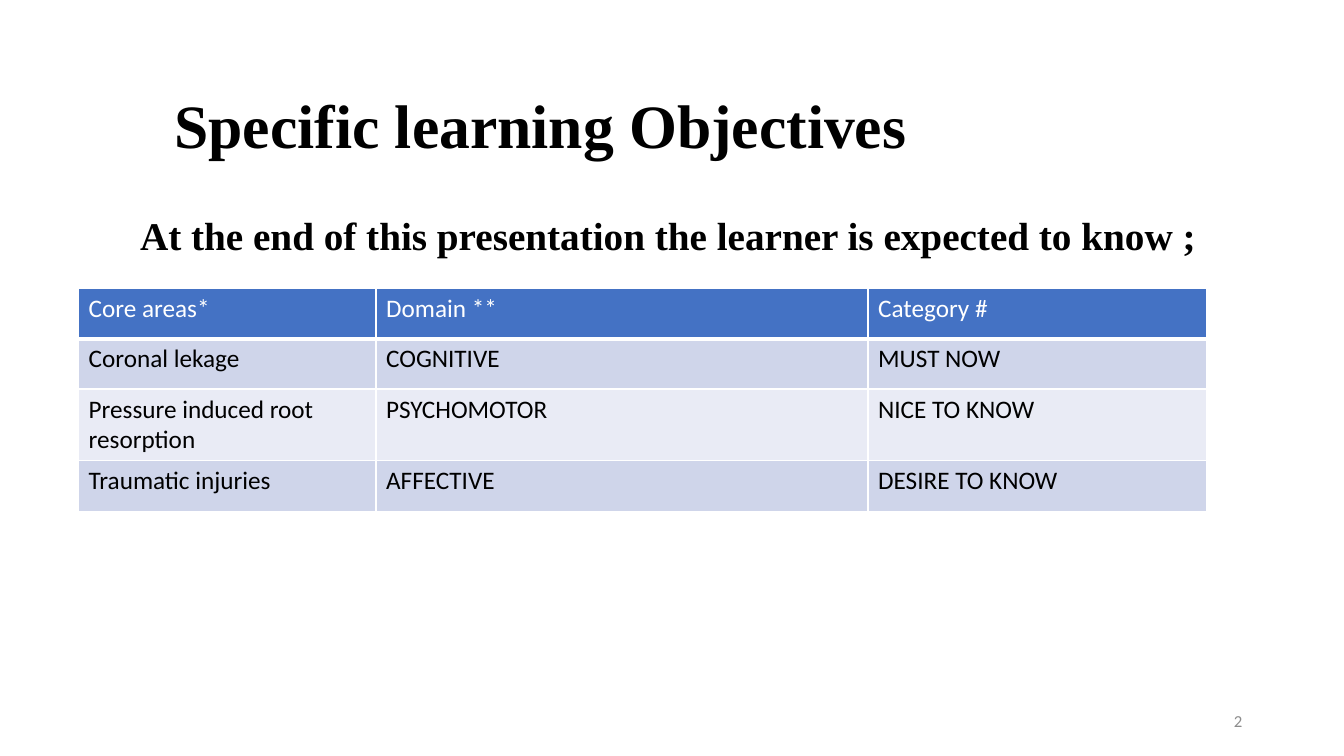
from lxml.etree import SubElement
from pptx import Presentation
from pptx.dml.color import RGBColor
from pptx.enum.text import MSO_ANCHOR, MSO_AUTO_SIZE, PP_ALIGN
from pptx.oxml.ns import qn
from pptx.util import Inches, Pt

SERIF, SANS = "Times New Roman", "Calibri"
BLACK, WHITE, GRAY = "000000", "FFFFFF", "8C8C8C"
HEADER_FILL, BAND_FILLS = "4472C4", ("CFD5EA", "E9EBF5")

COLUMN_WIDTHS = (2.95, 4.88, 3.36)
ROW_HEIGHT = 0.5
OBJECTIVES = (
    ("Core areas*", "Domain **", "Category #"),
    ("Coronal lekage", "COGNITIVE", "MUST NOW"),
    ("Pressure induced root resorption", "PSYCHOMOTOR", "NICE TO KNOW"),
    ("Traumatic injuries", "AFFECTIVE", "DESIRE TO KNOW"),
)


def color(hex_value):
    return RGBColor.from_string(hex_value)


def format_text(text_frame, text, size, font_name, hex_value, bold=False, align=PP_ALIGN.LEFT):
    text_frame.text = text
    paragraph = text_frame.paragraphs[0]
    paragraph.alignment = align
    font = paragraph.font
    font.size, font.name, font.bold = Pt(size), font_name, bold
    font.color.rgb = color(hex_value)


def add_title(slide, left, top, width, height):
    title = slide.shapes.title
    title.left, title.top = Inches(left), Inches(top)
    title.width, title.height = Inches(width), Inches(height)
    frame = title.text_frame
    frame.auto_size = MSO_AUTO_SIZE.NONE
    frame.vertical_anchor = MSO_ANCHOR.MIDDLE
    format_text(frame, "Specific learning Objectives", 44, SERIF, BLACK, bold=True)
    frame.paragraphs[0].line_spacing = 0.9


def add_text(slide, box, text, size, font_name, hex_value, anchor=MSO_ANCHOR.TOP, **style):
    frame = slide.shapes.add_textbox(*map(Inches, box)).text_frame
    frame.word_wrap = True
    frame.vertical_anchor = anchor
    format_text(frame, text, size, font_name, hex_value, **style)


def set_borders(cell, bottom_width):
    """Draw white cell borders, placed before the fill as the schema requires."""
    properties = cell._tc.get_or_add_tcPr()
    widths = {"a:lnL": 1, "a:lnR": 1, "a:lnT": 1, "a:lnB": bottom_width}
    for position, (tag, width) in enumerate(widths.items()):
        line = SubElement(properties, qn(tag), w=str(Pt(width)))
        fill = SubElement(line, qn("a:solidFill"))
        SubElement(fill, qn("a:srgbClr"), val=WHITE)
        properties.insert(position, line)


def add_objectives_table(slide, left, top):
    table = slide.shapes.add_table(
        len(OBJECTIVES), len(COLUMN_WIDTHS), Inches(left), Inches(top),
        Inches(sum(COLUMN_WIDTHS)), Inches(ROW_HEIGHT * len(OBJECTIVES)),
    ).table
    for column, width in zip(table.columns, COLUMN_WIDTHS):
        column.width = Inches(width)
    for row_index, row in enumerate(OBJECTIVES):
        is_header = row_index == 0
        fill = HEADER_FILL if is_header else BAND_FILLS[(row_index - 1) % 2]
        for column_index, text in enumerate(row):
            cell = table.cell(row_index, column_index)
            cell.fill.solid()
            cell.fill.fore_color.rgb = color(fill)
            format_text(cell.text_frame, text, 18, SANS, WHITE if is_header else BLACK)
            set_borders(cell, bottom_width=3 if is_header else 1)


def main():
    presentation = Presentation()
    presentation.slide_width, presentation.slide_height = Inches(13.33), Inches(7.5)
    slide = presentation.slides.add_slide(presentation.slide_layouts.get_by_name("Title Only"))
    add_title(slide, 1.63, 0.67, 10.13, 1.21)
    add_objectives_table(slide, 0.78, 2.86)
    add_text(slide, (1.29, 2.05, 10.71, 0.57),
             "At the end of this presentation the learner is expected to know ;",
             28, SERIF, BLACK, bold=True)
    add_text(slide, (9.42, 6.95, 3, 0.4), "2", 12, SANS, GRAY,
             anchor=MSO_ANCHOR.MIDDLE, align=PP_ALIGN.RIGHT)
    presentation.save("out.pptx")


if __name__ == "__main__":
    main()
